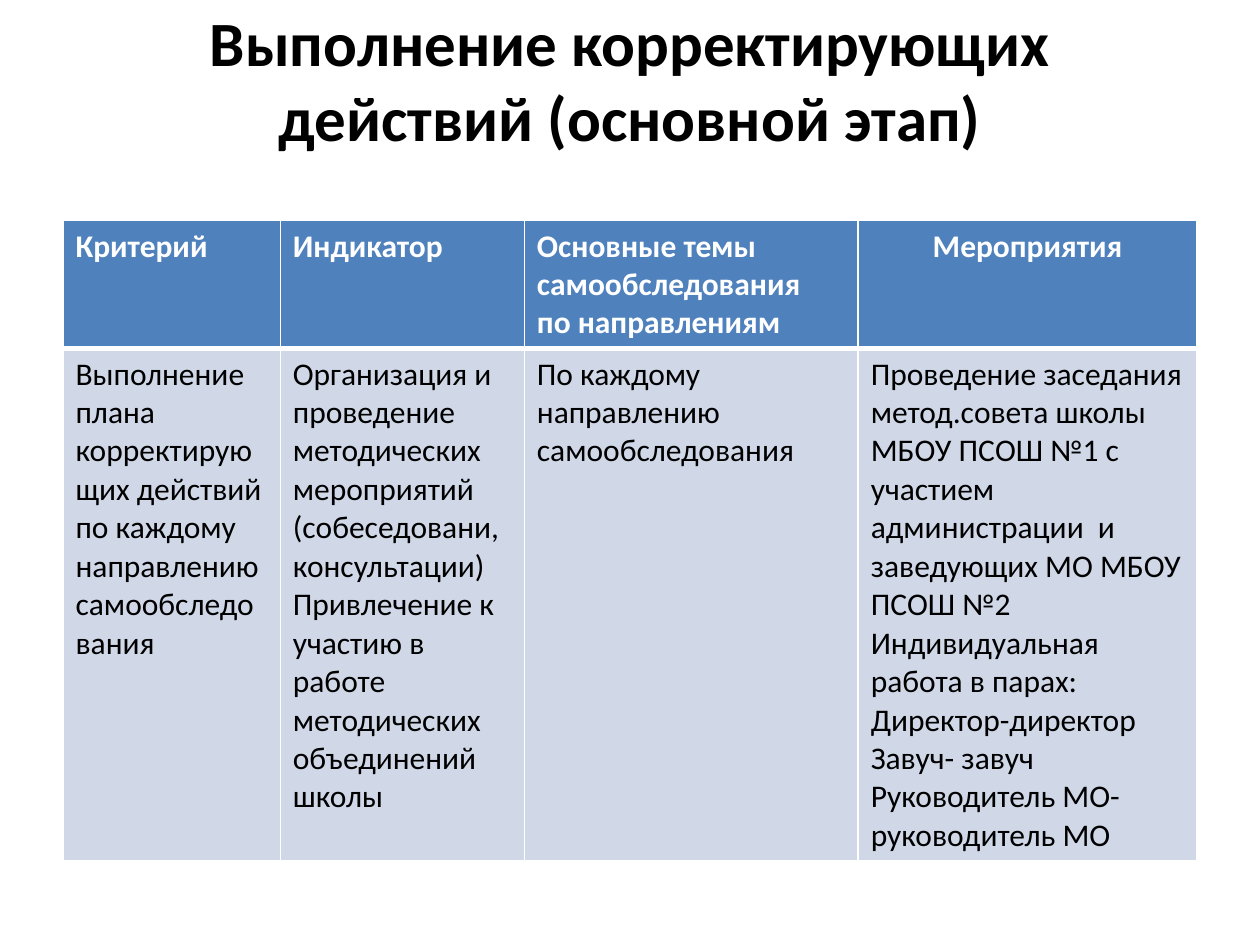
"""Build the slide about carrying out corrective actions."""
from dataclasses import dataclass

from lxml import etree
from pptx import Presentation
from pptx import util as u
from pptx.dml.color import RGBColor
from pptx.enum import text
from pptx.oxml.ns import qn

COLORS = {"header": "4F81BD", "body": "D0D8E8", "white": "FFFFFF", "black": "000000"}
FONT = "Calibri"
LEFT = u.Cm(1.27)
WIDTH = u.Cm(22.86)
ROW_HEIGHTS = (u.Cm(2.55), u.Cm(10.3))
THIN, THICK = u.Pt(1), u.Pt(3)


@dataclass
class Column:
    """A table column with its heading and body paragraphs."""

    width: u.Cm
    heading: str
    paragraphs: tuple[str, ...]
    heading_alignment: text.PP_ALIGN = text.PP_ALIGN.LEFT


@dataclass
class RowStyle:
    """The look of every cell in a row."""

    fill: str
    font: str
    bold: bool
    top: int
    bottom: int


COLUMNS = (
    Column(u.Cm(4.38), "Критерий", (
        "Выполнение плана корректирующих действий по каждому направлению самообследования",
    )),
    Column(u.Cm(4.92), "Индикатор", (
        "Организация и проведение методических мероприятий (собеседовани, консультации)",
        "Привлечение к участию в работе методических объединений школы",
    )),
    Column(u.Cm(6.73), "Основные темы  самообследования  по направлениям", (
        "По каждому направлению самообследования",
    )),
    Column(u.Cm(6.83), "Мероприятия", (
        "Проведение заседания метод.совета школы МБОУ ПСОШ №1 с участием "
        "администрации  и заведующих МО МБОУ ПСОШ №2",
        "Индивидуальная работа в парах: Директор-директор",
        "Завуч- завуч",
        "Руководитель МО-руководитель МО",
    ), text.PP_ALIGN.CENTER),
)
HEADER = RowStyle("header", "white", True, THIN, THICK)
BODY = RowStyle("body", "black", False, THICK, THIN)


def format_text(frame, size: int, color: str, bold: bool, alignment: text.PP_ALIGN) -> None:
    """Apply one font and alignment to all text in a frame."""
    for paragraph in frame.paragraphs:
        paragraph.alignment = alignment
        for run in paragraph.runs:
            run.font.name = FONT
            run.font.size = u.Pt(size)
            run.font.bold = bold
            run.font.color.rgb = RGBColor.from_string(COLORS[color])


def set_borders(cell, top: int, bottom: int) -> None:
    """Give a cell white borders."""
    properties = cell._tc.get_or_add_tcPr()
    widths = {"lnL": THIN, "lnR": THIN, "lnT": top, "lnB": bottom}
    for index, (side, width) in enumerate(widths.items()):
        line = etree.Element(qn(f"a:{side}"), w=str(int(width)))
        fill = etree.SubElement(line, qn("a:solidFill"))
        etree.SubElement(fill, qn("a:srgbClr"), val=COLORS["white"])
        properties.insert(index, line)


def fill_cell(cell, content: str, style: RowStyle, alignment: text.PP_ALIGN) -> None:
    """Write and style one table cell."""
    cell.text_frame.text = content
    format_text(cell.text_frame, 18, style.font, style.bold, alignment)
    cell.fill.solid()
    cell.fill.fore_color.rgb = RGBColor.from_string(COLORS[style.fill])
    set_borders(cell, style.top, style.bottom)


def add_title(slide, content: str) -> None:
    """Place the title, raised within its box by the bottom margin."""
    title = slide.shapes.title
    title.left, title.top, title.width, title.height = LEFT, u.Cm(0.76), WIDTH, u.Cm(3.18)
    frame = title.text_frame
    frame.text = content
    frame.word_wrap = True
    frame.auto_size = text.MSO_AUTO_SIZE.NONE
    frame.vertical_anchor = text.MSO_ANCHOR.MIDDLE
    frame.margin_bottom = u.Cm(1.65)
    format_text(frame, 36, "black", True, text.PP_ALIGN.CENTER)


def add_plan_table(slide) -> None:
    """Add the table of criteria and activities."""
    frame = slide.shapes.add_table(
        len(ROW_HEIGHTS), len(COLUMNS), LEFT, u.Cm(4.45), WIDTH, sum(ROW_HEIGHTS))
    table = frame.table
    for row, height in zip(table.rows, ROW_HEIGHTS):
        row.height = height
    for index, column in enumerate(COLUMNS):
        table.columns[index].width = column.width
        fill_cell(table.cell(0, index), column.heading, HEADER, column.heading_alignment)
        fill_cell(table.cell(1, index), "\n".join(column.paragraphs), BODY, text.PP_ALIGN.LEFT)


def main() -> None:
    """Create and save the presentation."""
    presentation = Presentation()
    presentation.slide_width, presentation.slide_height = u.Cm(25.4), u.Cm(19.05)
    slide = presentation.slides.add_slide(presentation.slide_layouts[5])
    add_title(slide, "Выполнение корректирующих действий (основной этап)")
    add_plan_table(slide)
    presentation.save("out.pptx")


if __name__ == "__main__":
    main()
